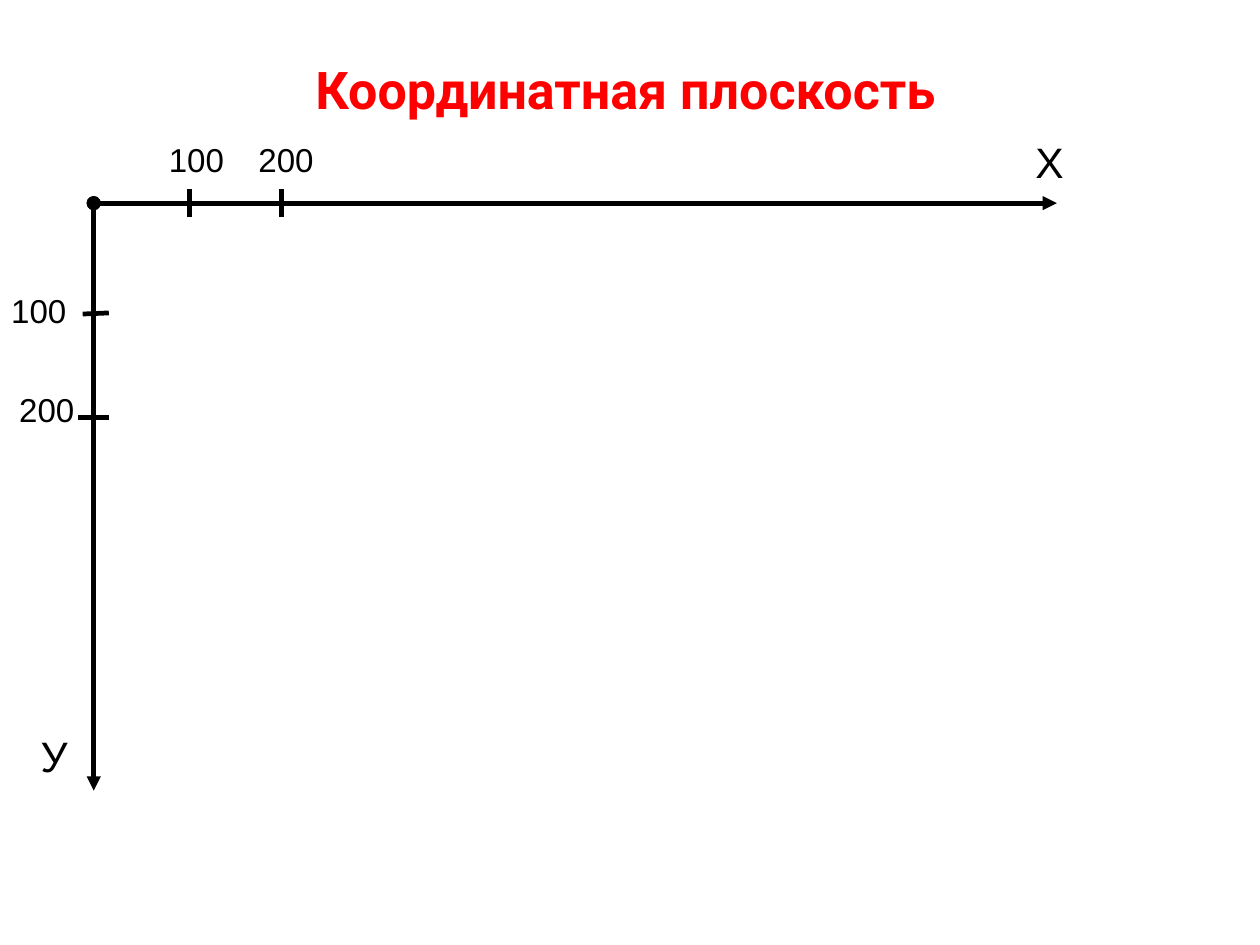
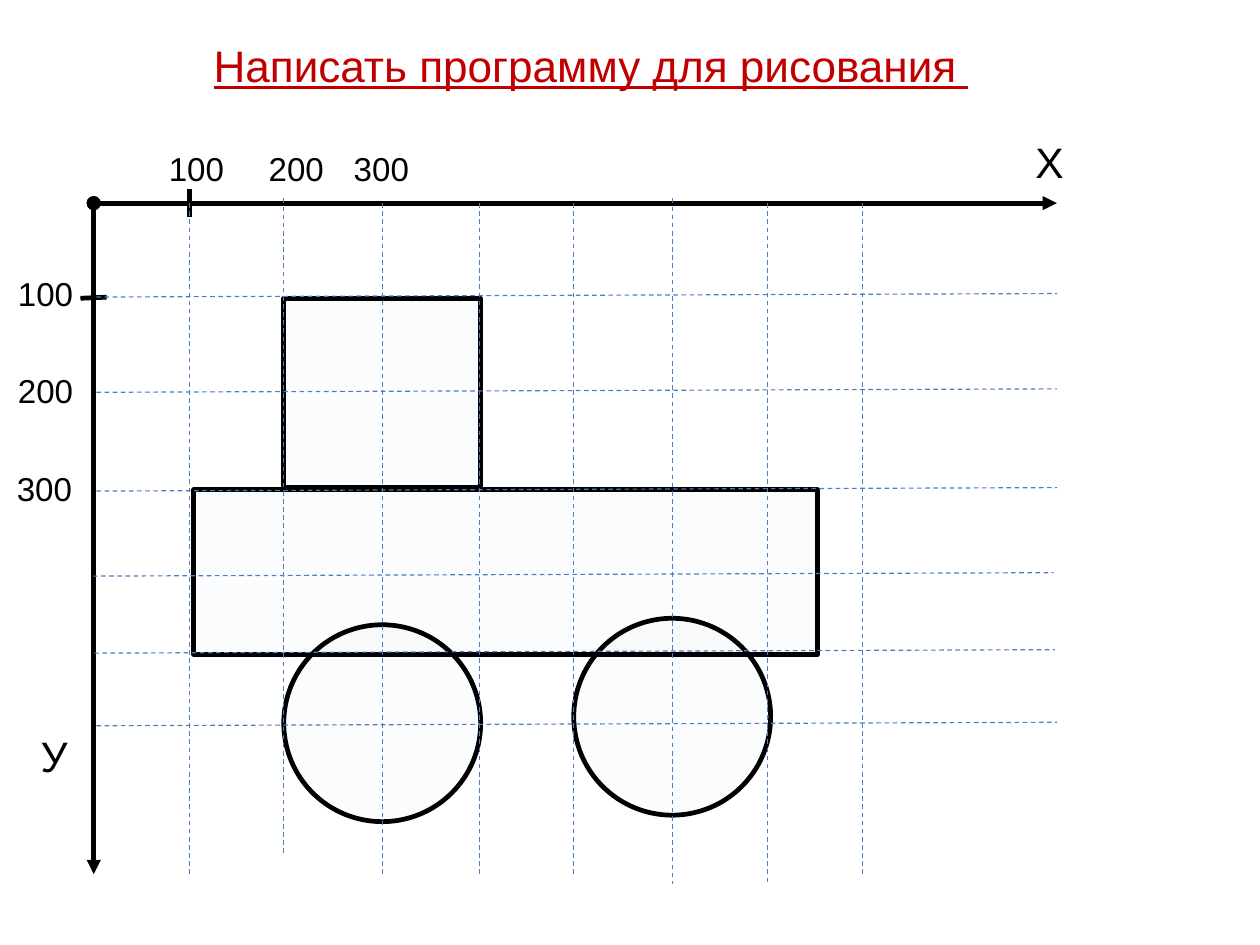
from dataclasses import dataclass

from lxml import etree
from pptx import Presentation
from pptx.dml.color import RGBColor
from pptx.enum import dml, shapes, text
from pptx.oxml.ns import qn
from pptx.util import Pt

COLOURS = {"ink": "000000", "plane": "FF0000", "task": "C00000",
           "grid": "4B7EBC", "tint": "4F81BD"}
TINT_ALPHA = "2000"
LABEL_SIZE, AXIS_SIZE = 21, 27
TITLE_ONLY = 5


@dataclass
class Box:
    left: float
    top: float
    width: float
    height: float

    def inner(self, left, top, width, height):
        """Box whose offsets are counted from this box's corner."""
        return Box(self.left + left, self.top + top, width, height)

    def lengths(self):
        return [Pt(side) for side in (self.left, self.top, self.width, self.height)]


PLANE = Box(59.5, 129, 611.5, 373)
GRID_PLANE = Box(59.5, 129, 611.5, 426)


def colour(name):
    return RGBColor.from_string(COLOURS[name])


def add_title(page, wording, box, font_name, size, shade, bold=False, underline=False):
    title = page.shapes.title
    title.left, title.top, title.width, title.height = box.lengths()
    frame = title.text_frame
    frame.text = wording
    frame.word_wrap = True
    frame.auto_size = text.MSO_AUTO_SIZE.NONE
    frame.vertical_anchor = text.MSO_ANCHOR.TOP
    para = frame.paragraphs[0]
    para.alignment = text.PP_ALIGN.CENTER
    font = para.font
    font.name, font.size = font_name, Pt(size)
    font.bold, font.underline = bold, underline
    font.color.rgb = colour(shade)


def add_label(page, wording, box, size=LABEL_SIZE):
    frame = page.shapes.add_textbox(*box.lengths()).text_frame
    frame.word_wrap = True
    frame.text = wording
    font = frame.paragraphs[0].font
    font.name, font.size = "Arial", Pt(size)
    font.color.rgb = colour("ink")


def add_line(page, start, end, shade="ink", width=3, dashed=False, arrow=False):
    line = page.shapes.add_connector(
        shapes.MSO_CONNECTOR.STRAIGHT, *[Pt(value) for value in (*start, *end)])
    line.line.color.rgb = colour(shade)
    line.line.width = Pt(width)
    if dashed:
        line.line.dash_style = dml.MSO_LINE.DASH
    if arrow:
        outline = line.line._get_or_add_ln()
        etree.SubElement(outline, qn("a:headEnd"), type="oval")
        etree.SubElement(outline, qn("a:tailEnd"), type="triangle")
    etree.SubElement(line._element.spPr, qn("a:effectLst"))


def add_part(page, kind, box):
    """Outlined part of the truck with a nearly clear fill."""
    part = page.shapes.add_shape(kind, *box.lengths())
    part.shadow.inherit = False
    part.fill.solid()
    part.fill.fore_color.rgb = colour("tint")
    tint = part._element.spPr.find(qn("a:solidFill"))[0]
    etree.SubElement(tint, qn("a:alpha"), val=TINT_ALPHA)
    part.line.color.rgb = colour("ink")
    part.line.width = Pt(3)


def add_axes(page, box):
    add_line(page, (box.left, box.top), (box.left + box.width, box.top), arrow=True)
    add_line(page, (box.left, box.top), (box.left, box.top + box.height), arrow=True)
    add_label(page, "Х", box.inner(590.7, -46.2, 71, 40), AXIS_SIZE)
    add_label(page, "У", box.inner(-40.8, 331, 71, 40), AXIS_SIZE)


def add_ticks(page, box, across, down):
    """Ticks at x offsets, and at (y, left, right, rise) on the other axis."""
    for offset in across:
        x = box.left + offset
        add_line(page, (x, box.top - 8.7), (x, box.top + 8.7))
    for offset, left, right, rise in down:
        y = box.top + offset
        add_line(page, (box.left + left, y), (box.left + right, y - rise))


def add_scale(page, box, across, across_top, down):
    """Labels in hundreds: x offsets along the top, (x, y) offsets down the side."""
    places = [[(x, across_top) for x in across], down]
    for places_on_axis in places:
        for count, (x, y) in enumerate(places_on_axis, 1):
            add_label(page, str(count * 100), box.inner(x, y, 57, 32.4))


def add_grid(page, box):
    columns = [(60.7, 0, 426), (120.5, -3, 414.6), (183.1, 0, 426), (245, 0, 426),
               (304.8, 0, 426), (367.5, -3, 432), (428, 0, 432), (488.4, 0, 426)]
    rows = [(59.6, 1.7), (120.1, 1.7), (182.8, 1.7),
            (236.8, -0.5), (285.7, 0.3), (331.8, 1.7)]
    style = dict(shade="grid", width=0.75, dashed=True)
    for offset, top, bottom in columns:
        x = box.left + offset
        add_line(page, (x, box.top + top), (x, box.top + bottom), **style)
    for offset, indent in rows:
        x, y = box.left + indent, box.top + offset
        add_line(page, (x, y), (x + 610, y - 2.2), **style)


def add_truck(page, box):
    rectangle, oval = shapes.MSO_SHAPE.RECTANGLE, shapes.MSO_SHAPE.OVAL
    add_part(page, rectangle, box.inner(63.6, 182, 396, 104.5))
    add_part(page, rectangle, box.inner(120.7, 60.4, 124.8, 120.2))
    for left, top in ((120.7, 267.7), (304.8, 263.6)):
        add_part(page, oval, box.inner(left, top, 125, 125))


def build_plane(page, box):
    add_title(page, "Координатная плоскость", Box(83, 33, 628.5, 47.5),
              "Roboto", 33, "plane", bold=True)
    add_axes(page, box)
    add_ticks(page, box, [60.7, 119], [(70.4, -7, 9.6, 0.7), (136, -9.8, 9.6, 0)])
    add_scale(page, box, [40.6, 97.5], -44, [(-59.5, 51.7), (-54.4, 114.4)])


def build_task(page, box):
    add_title(page, "Написать программу для рисования ", Box(61, 21, 628.5, 41),
              "Arial", 28, "task", underline=True)
    add_axes(page, box)
    add_ticks(page, box, [60.7], [(60.4, -8.4, 8.2, 0.7)])
    add_truck(page, box)
    add_grid(page, box)
    add_scale(page, box, [40.6, 104, 158], -38.3,
              [(-55.2, 41), (-55.2, 102.8), (-55.9, 164.8)])


def main():
    deck = Presentation()
    deck.slide_width, deck.slide_height = Pt(800), Pt(600)
    for build, box in ((build_plane, PLANE), (build_task, GRID_PLANE)):
        build(deck.slides.add_slide(deck.slide_layouts[TITLE_ONLY]), box)
    deck.save("out.pptx")


if __name__ == "__main__":
    main()
